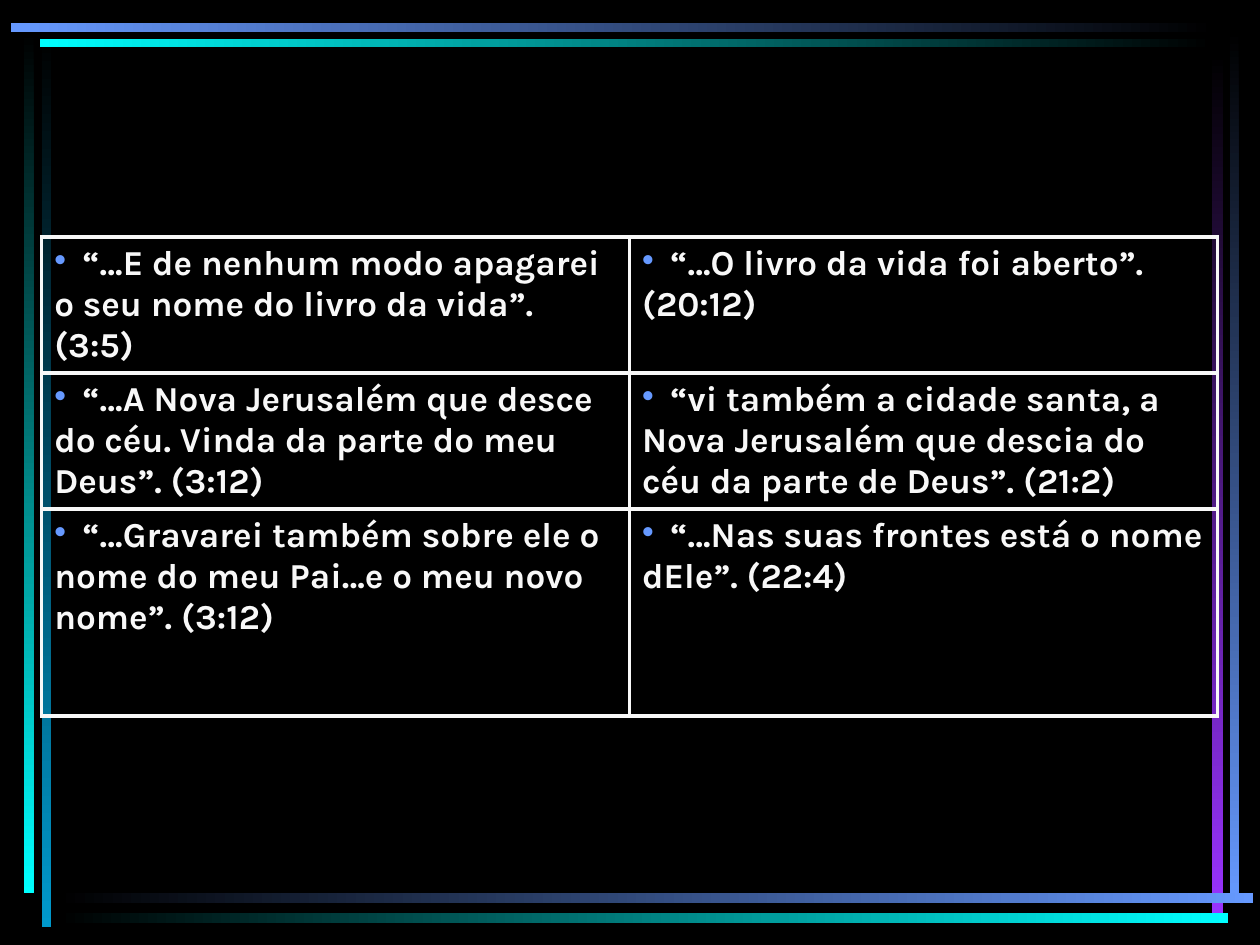
from dataclasses import dataclass

import pptx
import pptx.dml.color
import pptx.enum.shapes
import pptx.oxml
import pptx.oxml.ns
import pptx.util

Cm = pptx.util.Cm
Pt = pptx.util.Pt
RGB = pptx.dml.color.RGBColor.from_string


@dataclass(frozen=True)
class Theme:
    background: str = "000000"
    text: str = "F8F8F8"
    blue: str = "6699FF"
    cyan: str = "00FFFF"
    teal: str = "0099CC"
    purple: str = "9933FF"
    font: str = "Karla"
    text_size: float = 20
    border_width: float = 2.25


THEME = Theme()


@dataclass(frozen=True)
class Bar:
    """A frame bar that fades from start to end; measures in cm."""
    left: float
    top: float
    width: float
    height: float
    start: str
    end: str


BARS = [
    # Left side
    Bar(0.84, 0.71, 0.2, 17.98, THEME.background, THEME.teal),
    Bar(0.48, 0.64, 0.2, 17.37, THEME.background, THEME.cyan),
    # Right side
    Bar(24.79, 0.61, 0.18, 17.6, THEME.background, THEME.blue),
    Bar(24.43, 1.07, 0.23, 17.35, THEME.background, THEME.purple),
    # Bottom
    Bar(1.14, 18.01, 24.13, 0.2, THEME.background, THEME.blue),
    Bar(1.14, 18.41, 23.62, 0.2, THEME.background, THEME.cyan),
    # Top
    Bar(0.81, 0.78, 23.67, 0.16, THEME.cyan, THEME.background),
    Bar(0.22, 0.47, 24.28, 0.18, THEME.blue, THEME.background),
]

QUOTES = [
    ("“…E de nenhum modo apagarei o seu nome do livro da vida”. (3:5)",
     "“…O livro da vida foi aberto”. (20:12)"),
    ("“…A Nova Jerusalém que desce do céu. Vinda da parte do meu Deus”. (3:12)",
     "“vi também a cidade santa, a Nova Jerusalém que descia do céu da parte "
     "de Deus”. (21:2)"),
    ("“…Gravarei também sobre ele o nome do meu Pai…e o meu novo nome”. (3:12)",
     "“…Nas suas frontes está o nome dEle”. (22:4)"),
]
TABLE_LEFT, TABLE_TOP = 0.84, 4.78
COLUMN_WIDTH = 11.85
ROW_HEIGHTS = [2.74, 2.74, 4.17]
BULLET_GAP = 0.57


def parse(tag: str, content: str, attributes: str = ""):
    namespace = pptx.oxml.ns.nsdecls("a")
    return pptx.oxml.parse_xml(f"<a:{tag} {namespace} {attributes}>{content}</a:{tag}>")


def draw_bar(slide, bar: Bar) -> None:
    shape = slide.shapes.add_shape(
        pptx.enum.shapes.MSO_SHAPE.RECTANGLE,
        Cm(bar.left), Cm(bar.top), Cm(bar.width), Cm(bar.height))
    shape.shadow.inherit = False
    shape.line.fill.background()
    shape.fill.gradient()
    shape.fill.gradient_angle = 270 if bar.height > bar.width else 0
    for stop, position, color in zip(shape.fill.gradient_stops, (0, 1), (bar.start, bar.end)):
        stop.position = position
        stop.color.rgb = RGB(color)


def write_bullet(paragraph, text: str, *, size: float, color: str, font: str,
                 bold: bool, bullet_color: str) -> None:
    # The tab stop sets the gap after the bullet; wrapped lines start at the edge
    run = paragraph.add_run()
    run.text = "\t" + text
    run.font.size = Pt(size)
    run.font.bold = bold
    run.font.name = font
    run.font.color.rgb = RGB(color)
    properties = paragraph._p.get_or_add_pPr()
    properties.set("marL", "0")
    properties.set("indent", "0")
    properties.append(parse("spcBef", '<a:spcPct val="20000"/>'))
    properties.append(parse("buClr", f'<a:srgbClr val="{bullet_color}"/>'))
    properties.append(parse("buChar", "", 'char="•"'))
    properties.append(parse("tabLst", f'<a:tab pos="{Cm(BULLET_GAP)}" algn="l"/>'))


def set_borders(cell, color: str, width: float) -> None:
    properties = cell._tc.get_or_add_tcPr()
    for index, side in enumerate(("lnL", "lnR", "lnT", "lnB")):
        line = parse(side, f'<a:solidFill><a:srgbClr val="{color}"/></a:solidFill>',
                     f'w="{Pt(width)}"')
        properties.insert(index, line)


def draw_quotes(slide) -> None:
    columns = len(QUOTES[0])
    table = slide.shapes.add_table(
        len(QUOTES), columns, Cm(TABLE_LEFT), Cm(TABLE_TOP),
        Cm(columns * COLUMN_WIDTH), Cm(sum(ROW_HEIGHTS))).table
    table.first_row = False
    table.horz_banding = False
    for column in table.columns:
        column.width = Cm(COLUMN_WIDTH)
    for row, height, quotes in zip(table.rows, ROW_HEIGHTS, QUOTES):
        row.height = Cm(height)
        for cell, quote in zip(row.cells, quotes):
            cell.fill.background()
            set_borders(cell, THEME.text, THEME.border_width)
            write_bullet(cell.text_frame.paragraphs[0], quote, size=THEME.text_size,
                         color=THEME.text, font=THEME.font, bold=True,
                         bullet_color=THEME.blue)


def main() -> None:
    presentation = pptx.Presentation()
    presentation.slide_width = Cm(25.4)
    presentation.slide_height = Cm(19.05)
    slide = presentation.slides.add_slide(presentation.slide_layouts[6])
    slide.background.fill.solid()
    slide.background.fill.fore_color.rgb = RGB(THEME.background)

    # Glowing frame
    for bar in BARS:
        draw_bar(slide, bar)

    # Paired quotations
    draw_quotes(slide)

    presentation.save("out.pptx")


if __name__ == "__main__":
    main()
